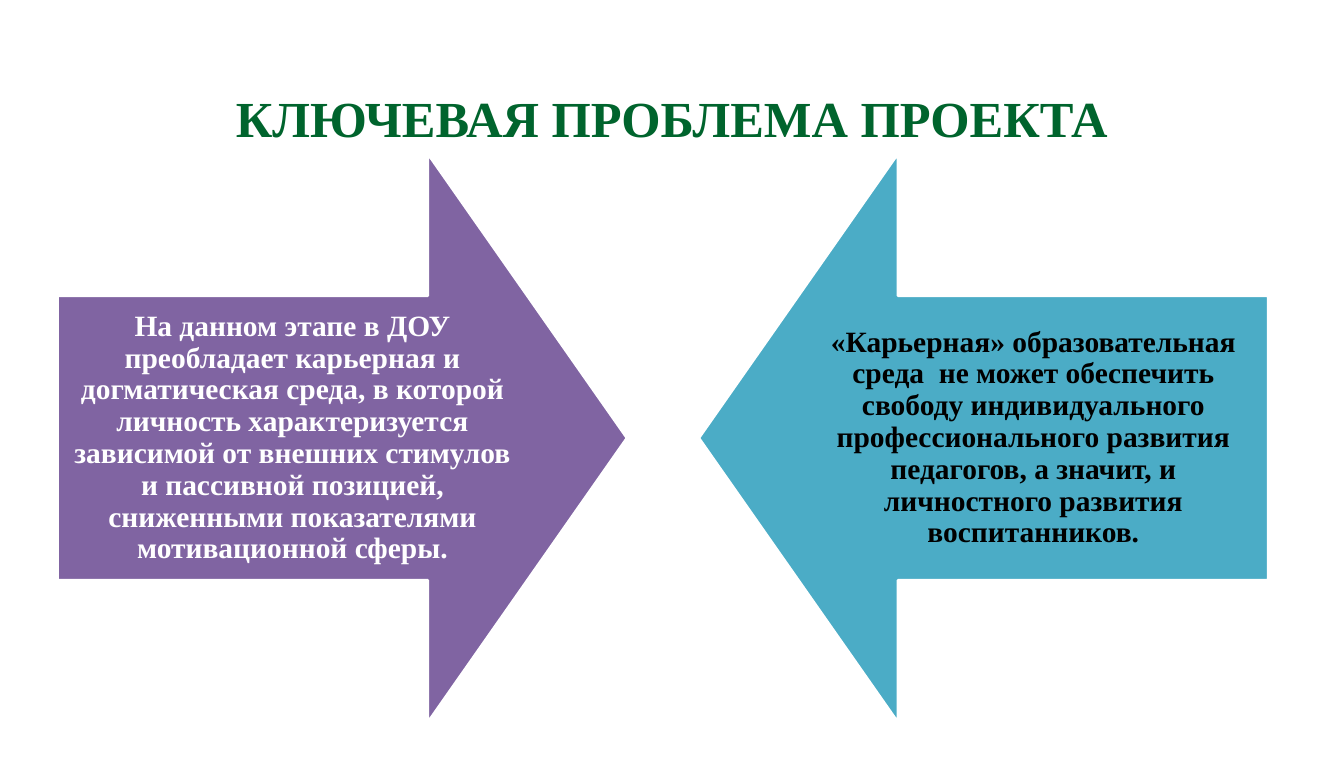
"""Build a slide with two arrows that state the key problem of the project."""
from dataclasses import dataclass

from pptx import Presentation
from pptx.dml.color import RGBColor
from pptx.enum.shapes import MSO_SHAPE
from pptx.enum.text import MSO_ANCHOR, MSO_AUTO_SIZE, PP_ALIGN
from pptx.util import Inches, Pt

RIGHT, LEFT = MSO_SHAPE.RIGHT_ARROW, MSO_SHAPE.LEFT_ARROW
TOP, MIDDLE = MSO_ANCHOR.TOP, MSO_ANCHOR.MIDDLE
CENTER = PP_ALIGN.CENTER
NO_AUTOFIT = MSO_AUTO_SIZE.NONE


@dataclass(frozen=True)
class Theme:
    """Colours, font and type sizes."""
    font: str = "Times New Roman"
    title_size: int = 36
    body_size: int = 21
    line_spacing: float = 0.9
    green: str = "00642D"
    purple: str = "8064A2"
    teal: str = "4BACC6"
    white: str = "FFFFFF"
    black: str = "000000"


THEME = Theme()
TITLE = "КЛЮЧЕВАЯ ПРОБЛЕМА ПРОЕКТА"
ARROWS = [
    (RIGHT, THEME.purple, THEME.white,
     "На данном этапе в ДОУ преобладает карьерная и догматическая среда, "
     "в которой личность характеризуется зависимой от внешних стимулов "
     "и пассивной позицией, сниженными показателями мотивационной сферы."),
    (LEFT, THEME.teal, THEME.black,
     "«Карьерная» образовательная среда  не может обеспечить свободу "
     "индивидуального профессионального развития педагогов, а значит, "
     "и личностного развития воспитанников."),
]

SLIDE_W, SLIDE_H = 13.31, 7.5
TITLE_TOP, TITLE_H = 0.93, 0.55
ARROW_LEFT, ARROW_TOP, ARROW_SIZE, ARROW_GAP = 0.57, 1.52, 5.64, 0.71
SHAFT, HEAD = 0.5, 0.35
ARROW_INSET = 0.16


def set_text(s, text, size, color, anchor, inset):
    """Write one centred bold paragraph into a shape."""
    tf = s.text_frame
    tf.word_wrap = True
    tf.auto_size = NO_AUTOFIT
    tf.vertical_anchor = anchor
    tf.margin_left = tf.margin_right = Inches(inset)
    tf.margin_top = tf.margin_bottom = Inches(inset)
    p = tf.paragraphs[0]
    p.alignment = CENTER
    p.line_spacing = THEME.line_spacing
    p.space_before = Pt(0)
    r = p.add_run()
    r.text = text
    r.font.name = THEME.font
    r.font.size = Pt(size)
    r.font.bold = True
    r.font.color.rgb = RGBColor.from_string(color)


def add_title(s):
    """Place and fill the title placeholder."""
    title = s.shapes.title
    title.left, title.top = Inches(0), Inches(TITLE_TOP)
    title.width, title.height = Inches(SLIDE_W), Inches(TITLE_H)
    set_text(title, TITLE, THEME.title_size, THEME.green, TOP, 0)


def add_arrow(s, index, kind, fill, color, text):
    """Draw one square block arrow with its statement."""
    x = ARROW_LEFT + index * (ARROW_SIZE + ARROW_GAP)
    sp = s.shapes.add_shape(kind, Inches(x), Inches(ARROW_TOP),
                            Inches(ARROW_SIZE), Inches(ARROW_SIZE))
    sp.adjustments[0], sp.adjustments[1] = SHAFT, HEAD
    sp.shadow.inherit = False
    sp.fill.solid()
    sp.fill.fore_color.rgb = RGBColor.from_string(fill)
    sp.line.color.rgb = RGBColor.from_string(THEME.white)
    sp.line.width = Pt(2)
    set_text(sp, text, THEME.body_size, color, MIDDLE, ARROW_INSET)


def main():
    """Assemble and save the slide."""
    prs = Presentation()
    prs.slide_width, prs.slide_height = Inches(SLIDE_W), Inches(SLIDE_H)
    s = prs.slides.add_slide(prs.slide_layouts.get_by_name("Title Only"))
    add_title(s)
    for index, arrow in enumerate(ARROWS):
        add_arrow(s, index, *arrow)
    prs.save("out.pptx")


if __name__ == "__main__":
    main()
